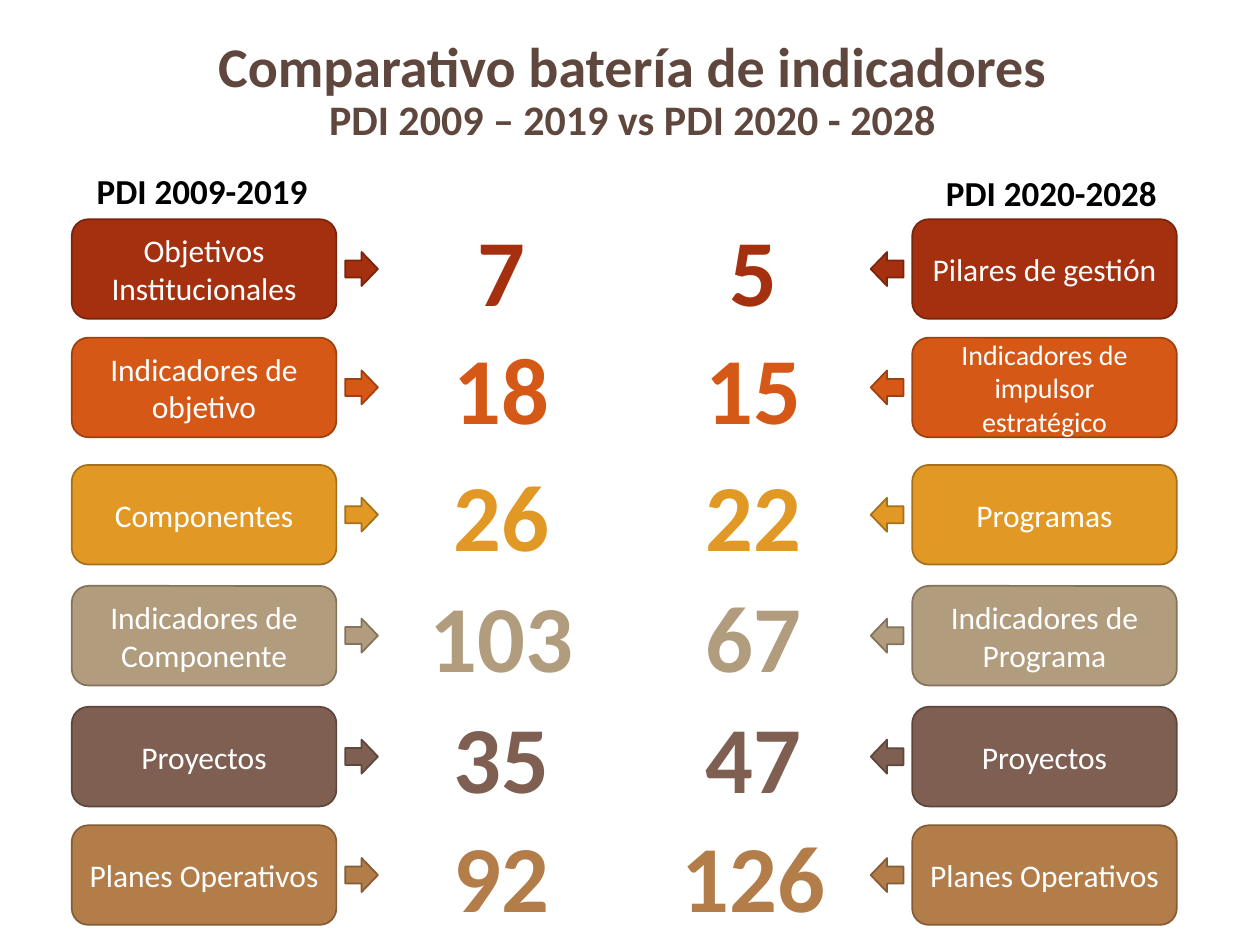
from pptx import Presentation
from pptx import util as u
from pptx.dml.color import RGBColor
from pptx.enum import shapes, text

HUES = {  # fill, outline
    "red": ("A5300F", "7A240B"),
    "orange": ("D55816", "9E4110"),
    "gold": ("E19825", "A6701B"),
    "sand": ("B19C7D", "83735C"),
    "brown": ("7F5F52", "5E463D"),
    "tan": ("B27D49", "845C36"),
}
INK = {"title": "5F473E", "head": "000000", "label": "FFFFFF"}

# top, hue, left label, left count, right count, right label, right label size
ROWS = [
    (1.74, "red", "Objetivos Institucionales", 7, 5, "Pilares de gestión", 18),
    (2.68, "orange", "Indicadores de objetivo", 18, 15,
     "Indicadores de impulsor estratégico", 16),
    (3.69, "gold", "Componentes", 26, 22, "Programas", 18),
    (4.65, "sand", "Indicadores de Componente", 103, 67,
     "Indicadores de Programa", 18),
    (5.61, "brown", "Proyectos", 35, 47, "Proyectos", 18),
    (6.55, "tan", "Planes Operativos", 92, 126, "Planes Operativos", 18),
]
LEFT, WIDE, HIGH = 0.57, 8.77, 0.79  # band that holds one row
CARD = 2.1
ARROW = (0.26, 0.27)


def inches(*box):
    return [u.Inches(v) for v in box]


def write(frame, words, size=18, color="000000", bold=False, wrap=True,
          anchor=text.MSO_ANCHOR.MIDDLE, fit=text.MSO_AUTO_SIZE.NONE):
    """Set centred text; words may be a string or (string, size) lines."""
    frame.word_wrap = wrap
    frame.auto_size = fit
    frame.vertical_anchor = anchor
    para = frame.paragraphs[0]
    para.alignment = text.PP_ALIGN.CENTER
    lines = [(words, size)] if isinstance(words, str) else words
    for i, (line, pts) in enumerate(lines):
        if i:
            para.add_line_break()
        run = para.add_run()
        run.text = line
        font = run.font
        font.name, font.size, font.bold = "Calibri", u.Pt(pts), bold
        font.color.rgb = RGBColor.from_string(color)
    return para


def block(slide, kind, box, hue):
    shape = slide.shapes.add_shape(kind, *inches(*box))
    fill, edge = HUES[hue]
    shape.shadow.inherit = False
    shape.fill.solid()
    shape.fill.fore_color.rgb = RGBColor.from_string(fill)
    shape.line.color.rgb = RGBColor.from_string(edge)
    shape.line.width = u.Pt(1)
    return shape


def label(slide, box, words, **style):
    frame = slide.shapes.add_textbox(*inches(*box)).text_frame
    write(frame, words, bold=True, anchor=text.MSO_ANCHOR.TOP,
          fit=text.MSO_AUTO_SIZE.SHAPE_TO_FIT_TEXT, **style)


def heading(slide, box):
    title = slide.shapes.title
    title.left, title.top, title.width, title.height = inches(*box)
    para = write(title.text_frame,
                 [("Comparativo batería de indicadores", 32),
                  ("PDI 2009 – 2019 vs PDI 2020 - 2028", 24)],
                 color=INK["title"], bold=True)
    para.line_spacing = 0.9


def side(slide, box, hue, words, count, size=18, flip=False):
    """One half of a row: card, arrow and count, mirrored when flip is set."""
    x, y, w, h = box

    def place(gap, width):
        return x + w - gap - width if flip else x + gap

    card = block(slide, shapes.MSO_SHAPE.ROUNDED_RECTANGLE,
                 (place(0, CARD), y, CARD, h), hue)
    write(card.text_frame, words, size=size, color=INK["label"])

    aw, ah = ARROW
    arrow = block(slide, shapes.MSO_SHAPE.RIGHT_ARROW,
                  (place(CARD + 0.07, aw), y + (h - ah) / 2, aw, ah), hue)
    arrow.rotation = 180 if flip else 0

    # the count box widens by one digit at a time
    digits = str(count)
    cw = 0.21 + 0.38 * len(digits)
    mid = place(3.36 if flip else 3.41, 0)
    label(slide, (mid - cw / 2, y - 0.11, cw, 1.01), digits,
          size=54, color=HUES[hue][0], wrap=False)


def main():
    deck = Presentation()
    deck.slide_width, deck.slide_height = inches(10, 7.5)
    slide = deck.slides.add_slide(deck.slide_layouts[5])

    heading(slide, (0.71, 0.29, 8.62, 0.88))

    # Column heads
    for x, y, words in ((0.61, 1.3, "PDI 2009-2019"),
                        (7.35, 1.31, "PDI 2020-2028")):
        label(slide, (x, y, 1.99, 0.44), words, size=20, color=INK["head"])

    # Comparison rows
    for top, hue, old, before, after, new, size in ROWS:
        band = (LEFT, top, WIDE, HIGH)
        side(slide, band, hue, old, before)
        side(slide, band, hue, new, after, size=size, flip=True)

    deck.save("out.pptx")


if __name__ == "__main__":
    main()
